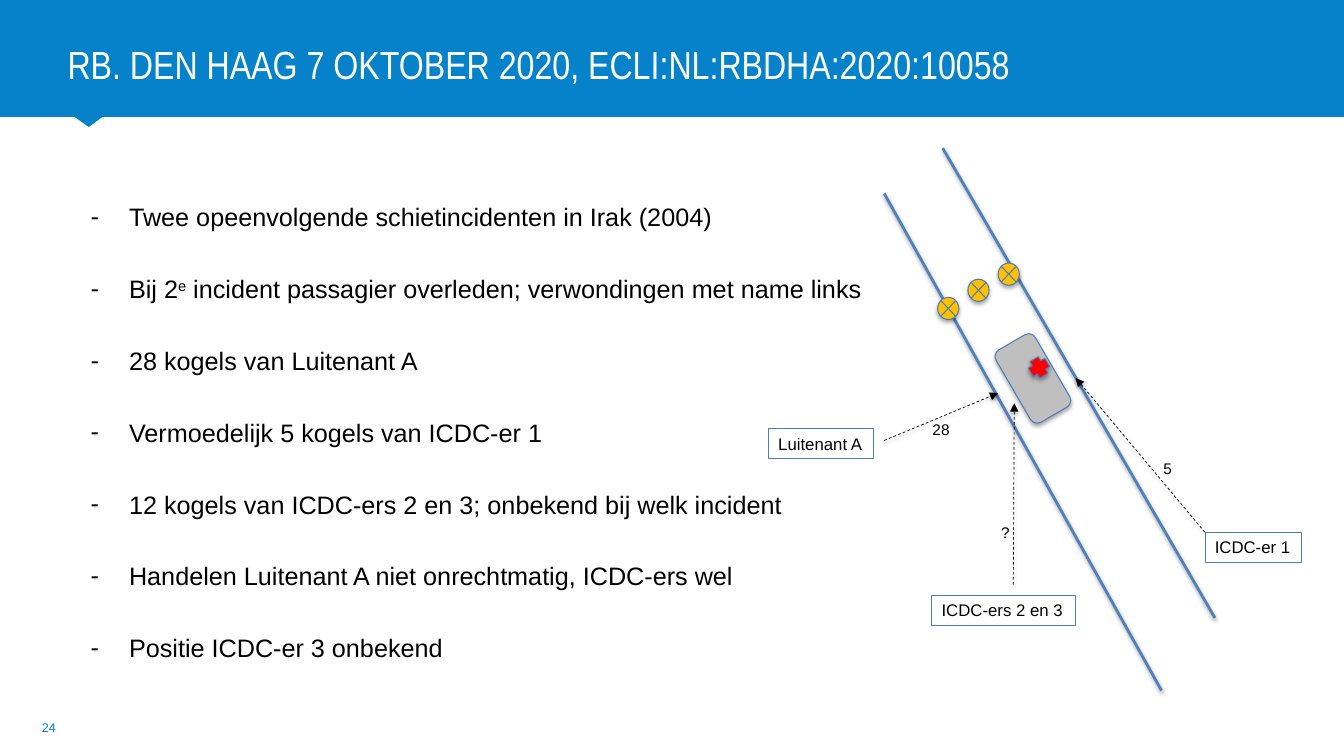
from lxml import etree
from pptx import Presentation
from pptx.dml.color import RGBColor
from pptx.enum.dml import MSO_LINE
from pptx.enum.shapes import MSO_CONNECTOR, MSO_SHAPE
from pptx.enum.text import MSO_ANCHOR, MSO_AUTO_SIZE, PP_ALIGN
from pptx.oxml.ns import qn
from pptx.util import Inches, Pt

RECT, ROUNDED = MSO_SHAPE.RECTANGLE, MSO_SHAPE.ROUNDED_RECTANGLE
JUNCTION, CROSS = MSO_SHAPE.FLOWCHART_SUMMING_JUNCTION, MSO_SHAPE.CROSS
STRAIGHT, DASH = MSO_CONNECTOR.STRAIGHT, MSO_LINE.DASH
MIDDLE, TOP = MSO_ANCHOR.MIDDLE, MSO_ANCHOR.TOP
LEFT, CENTER = PP_ALIGN.LEFT, PP_ALIGN.CENTER
NO_FIT = MSO_AUTO_SIZE.NONE

# Content
COLORS = {"band": "0582C9", "number": "0082C8", "white": "FFFFFF", "black": "000000",
          "road": "4F81BD", "outline": "4B7EBC", "post": "FFC000", "car": "BFBFBF",
          "victim": "FF0000"}
TITLE = "RB. DEN HAAG 7 OKTOBER 2020, ECLI:NL:RBDHA:2020:10058"
# Each bullet is a list of (text, superscript) runs
BULLETS = [
    [("Twee opeenvolgende schietincidenten in Irak (2004)", False)],
    [("Bij 2", False), ("e", True),
     (" incident passagier overleden; verwondingen met name links", False)],
    [("28 kogels van Luitenant A", False)],
    [("Vermoedelijk 5 kogels van ICDC-er 1", False)],
    [("12 kogels van ICDC-ers 2 en 3; onbekend bij welk incident", False)],
    [("Handelen Luitenant A niet onrechtmatig, ICDC-ers wel", False)],
    [("Positie ICDC-er 3 onbekend", False)],
]
ROAD_SIDES = [(8.77, 1.92, 11.52, 6.85), (9.35, 1.47, 12.05, 6.13)]
POSTS = [(9.3, 2.95), (9.6, 2.77), (9.9, 2.61)]
SHOOTERS = [("Luitenant A", 7.62, 4.25, 1.04), ("ICDC-ers 2 en 3", 9.24, 5.9, 1.42),
            ("ICDC-er 1", 11.95, 5.28, 0.96)]
SHOTS = [(8.77, 4.37, 9.9, 3.9), (10.05, 5.8, 10.06, 4), (11.95, 5.28, 10.67, 3.75)]
SHOT_COUNTS = [("28", 9.15, 4.12, 0.37), ("?", 9.83, 5.14, 0.29), ("5", 11.44, 4.51, 0.29)]


def rgb(name):
    return RGBColor.from_string(COLORS[name])


def add_shadow(sp, opacity, distance):
    effects = etree.SubElement(sp._element.spPr, qn("a:effectLst"))
    shadow = etree.SubElement(effects, qn("a:outerShdw"), blurRad=str(Pt(3.1)),
                              dist=str(Pt(distance)), dir="5400000", rotWithShape="0")
    color = etree.SubElement(shadow, qn("a:srgbClr"), val=COLORS["black"])
    etree.SubElement(color, qn("a:alpha"), val=str(opacity * 1000))


def add_run(p, text, size, color="black", font="Arial"):
    r = p.add_run()
    r.text = text
    r.font.size, r.font.name = Pt(size), font
    r.font.color.rgb = rgb(color)
    return r


def add_line(ends, color, width):
    line = s.shapes.add_connector(STRAIGHT, *[Inches(v) for v in ends])
    line.line.color.rgb = rgb(color)
    line.line.width = Pt(width)
    add_shadow(line, 38, 1.6)
    return line


def paint(sp, fill=None, outline=None, width=0.75):
    if fill:
        sp.fill.solid()
        sp.fill.fore_color.rgb = rgb(fill)
    else:
        sp.fill.background()
    if outline:
        sp.line.color.rgb = rgb(outline)
        sp.line.width = Pt(width)
    else:
        sp.line.fill.background()


def add_shape(kind, box, fill=None, outline=None, width=0.75):
    sp = s.shapes.add_shape(kind, *[Inches(v) for v in box])
    paint(sp, fill, outline, width)
    return sp


def add_solid(kind, box, fill, rotation=0):
    sp = add_shape(kind, box, fill, "outline")
    sp.rotation = rotation
    add_shadow(sp, 35, 1.8)


def place(sp, left, top, width, height):
    sp.left, sp.top = Inches(left), Inches(top)
    sp.width, sp.height = Inches(width), Inches(height)


def label(sp, text, size, color="black", align=LEFT, anchor=TOP):
    tf = sp.text_frame
    tf.word_wrap, tf.vertical_anchor = False, anchor
    p = tf.paragraphs[0]
    p.alignment = align
    add_run(p, text, size, color)


prs = Presentation()
prs.slide_width, prs.slide_height = Inches(13.33), Inches(7.5)
s = prs.slides.add_slide(prs.slide_layouts[1])

# Header band with pointer, behind the title
band = add_shape(RECT, (0, -0.04, 13.33, 1.2), "band")
band.shadow.inherit = False
outline = s.shapes.build_freeform(Inches(0.74), Inches(1.16), scale=1.0)
outline.add_line_segments([(Inches(x), Inches(y)) for x, y in [(0.88, 1.26), (1.03, 1.15)]])
pointer = outline.convert_to_shape()
paint(pointer, "band")
pointer.shadow.inherit = False
for i, sp in enumerate((band, pointer)):
    s.shapes._spTree.insert(2 + i, sp._element)

# Title
title = s.shapes.title
place(title, 0.67, 0, 12.66, 1.18)
tf = title.text_frame
tf.auto_size, tf.vertical_anchor = NO_FIT, MIDDLE
tf.margin_left, tf.margin_top = 0, Inches(0.2)
tf.margin_right, tf.margin_bottom = Inches(0.39), Inches(0.12)
p = tf.paragraphs[0]
p.alignment = LEFT
add_run(p, TITLE, 28, "white", "Arial Narrow")

# Bullets
body = s.placeholders[1]
place(body, 0.51, 1.95, 12.16, 4.75)
tf = body.text_frame
tf.auto_size, tf.vertical_anchor = NO_FIT, TOP
for i, runs in enumerate(BULLETS):
    p = tf.paragraphs[0] if i == 0 else tf.add_paragraph()
    pPr = p._p.get_or_add_pPr()
    pPr.set("marL", str(Inches(0.67)))
    pPr.set("indent", str(Inches(-0.38)))
    etree.SubElement(pPr, qn("a:buFont"), typeface="Arial")
    etree.SubElement(pPr, qn("a:buChar"), char="-")
    p.space_before = Pt(29.7 if i else 0)
    for text, superscript in runs:
        r = add_run(p, text, 18)
        if superscript:
            r.font._element.set("baseline", "30000")

# Road, posts, car and victim
for ends in ROAD_SIDES:
    add_line(ends, "road", 2)
for left, top in POSTS:
    add_solid(JUNCTION, (left, top, 0.21, 0.22), "post")
add_solid(ROUNDED, (10.02, 3.34, 0.45, 0.83), "car", 329.8)
add_solid(CROSS, (10.21, 3.55, 0.19, 0.19), "victim", 329.5)

# Shooters, their shots and the number of bullets
for text, left, top, width in SHOOTERS:
    sp = add_shape(RECT, (left, top, width, 0.3), None, "outline", 0.25)
    sp.shadow.inherit = False
    label(sp, text, 12)
for ends in SHOTS:
    shot = add_line(ends, "black", 0.5)
    shot.line.dash_style = DASH
    etree.SubElement(shot.line._get_or_add_ln(), qn("a:tailEnd"), type="triangle")
for text, left, top, width in SHOT_COUNTS:
    sp = s.shapes.add_textbox(Inches(left), Inches(top), Inches(width), Inches(0.29))
    label(sp, text, 11)

# Slide number
sp = s.shapes.add_textbox(Inches(0.15), Inches(7.02), Inches(0.67), Inches(0.4))
label(sp, "24", 9, "number", CENTER, MIDDLE)

prs.save("out.pptx")
